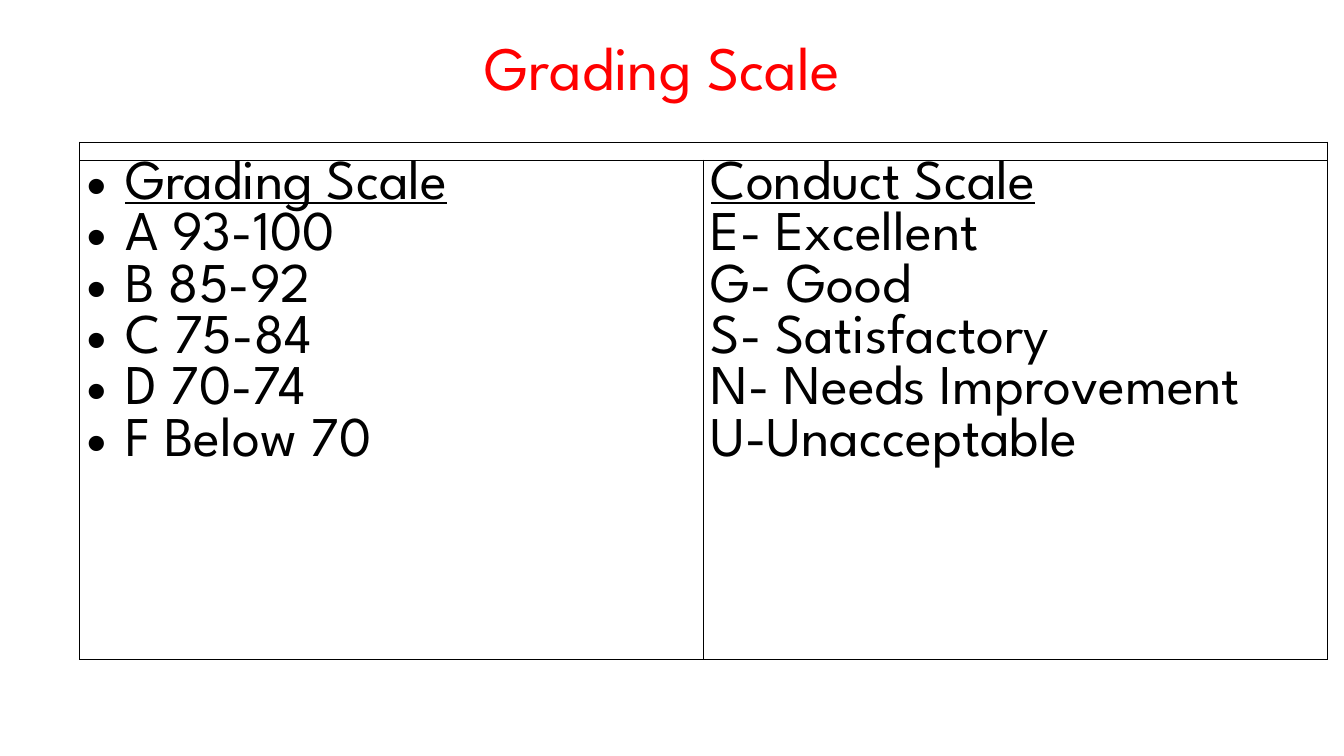
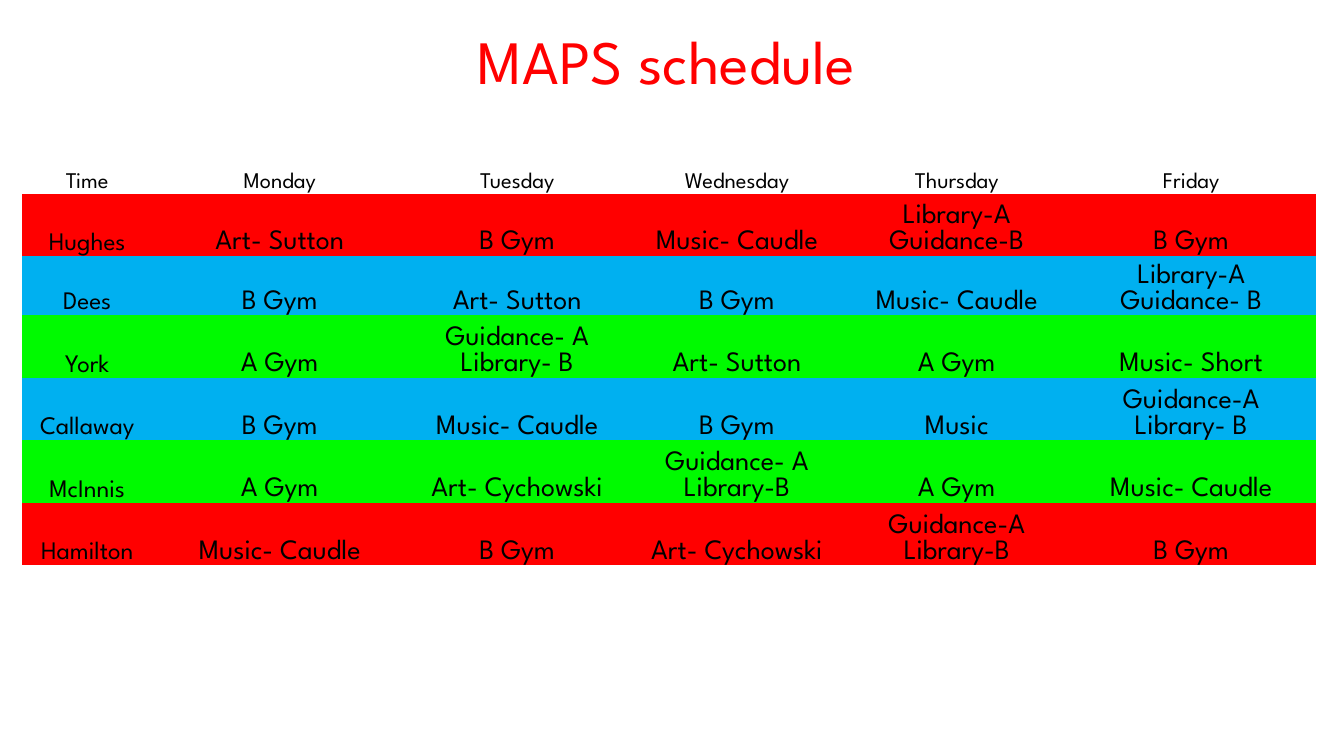
from lxml import etree
from pptx import Presentation
from pptx.dml.color import RGBColor
from pptx.enum.text import MSO_ANCHOR, PP_ALIGN
from pptx.oxml.ns import qn
from pptx.util import Inches, Pt

CENTER, LEFT = PP_ALIGN.CENTER, PP_ALIGN.LEFT
TOP, MIDDLE, BOTTOM = MSO_ANCHOR.TOP, MSO_ANCHOR.MIDDLE, MSO_ANCHOR.BOTTOM
TITLE_ONLY = 5
NO_STYLE = "{2D5ABB26-0587-4C30-8999-92F81FD0307C}"
RED, BLUE, GREEN = "FF0000", "00B0F0", "00FA00"
BLACK, WHITE = "000000", "FFFFFF"

GRADES = ["Grading Scale", "A 93-100", "B 85-92", "C 75-84", "D 70-74", "F Below 70"]
CONDUCT = ["Conduct Scale", "E- Excellent", "G- Good", "S- Satisfactory",
           "N- Needs Improvement", "U-Unacceptable"]
DAYS = ["Time", "Monday", "Tuesday", "Wednesday", "Thursday", "Friday"]
CLASSES = [
    (RED, ["Hughes", "Art- Sutton", "B Gym", "Music- Caudle",
           "Library-A\nGuidance-B", "B Gym"]),
    (BLUE, ["Dees", "B Gym", "Art- Sutton", "B Gym", "Music- Caudle",
            "Library-A\nGuidance- B"]),
    (GREEN, ["York", "A Gym", "Guidance- A\nLibrary- B", "Art- Sutton", "A Gym",
             "Music- Short"]),
    (BLUE, ["Callaway", "B Gym", "Music- Caudle", "B Gym", "Music",
            "Guidance-A\nLibrary- B"]),
    (GREEN, ["McInnis", "A Gym", "Art- Cychowski", "Guidance- A\nLibrary-B",
             "A Gym", "Music- Caudle"]),
    (RED, ["Hamilton", "Music- Caudle", "B Gym", "Art- Cychowski",
           "Guidance-A\nLibrary-B", "B Gym"]),
]


def rgb(color):
    """Turn a hex string into a colour."""
    return RGBColor.from_string(color)


class Deck:
    """Holds the shared style and the current slide."""

    font = "League Spartan"

    def __init__(self):
        """Start an empty widescreen presentation."""
        self.prs = Presentation()
        self.prs.slide_width, self.prs.slide_height = Inches(13.33), Inches(7.5)
        self.s = None

    def run(self, p, text, size, color=BLACK, underline=False):
        """Add one styled run to a paragraph."""
        r = p.add_run()
        r.text = text
        r.font.name, r.font.size = self.font, Pt(size)
        r.font.color.rgb = rgb(color)
        r.font.underline = underline

    def slide(self, title, x, y):
        """Add a slide with a centred red title."""
        self.s = self.prs.slides.add_slide(self.prs.slide_layouts[TITLE_ONLY])
        sp = self.s.shapes.title
        sp.left, sp.top, sp.width, sp.height = map(Inches, (x, y, 10, 0.89))
        tf = sp.text_frame
        tf.word_wrap, tf.vertical_anchor = True, MIDDLE
        p = tf.paragraphs[0]
        p.alignment, p.line_spacing = CENTER, 0.9
        self.run(p, title, 44, RED)

    def table(self, x, y, widths, heights):
        """Add a plain table with the given column widths and row heights."""
        frame = self.s.shapes.add_table(
            len(heights), len(widths), Inches(x), Inches(y),
            Inches(sum(widths)), Inches(sum(heights)))
        table = frame.table
        table.first_row = table.horz_banding = False
        table._tbl.tblPr.find(qn("a:tableStyleId")).text = NO_STYLE
        for column, width in zip(table.columns, widths):
            column.width = Inches(width)
        for row, height in zip(table.rows, heights):
            row.height = Inches(height)
        return table

    def cell(self, cell, fill, side=0, top=0, anchor=TOP):
        """Set the fill, margins and anchor of a cell."""
        cell.margin_left = cell.margin_right = Inches(side)
        cell.margin_top, cell.margin_bottom = Inches(top), 0
        cell.vertical_anchor = anchor
        if fill:
            cell.fill.solid()
            cell.fill.fore_color.rgb = rgb(fill)
        else:
            cell.fill.background()

    def lines(self, cell, texts, size, align=LEFT, heading=False, bullets=False):
        """Write one paragraph per text, with the first underlined as a heading."""
        tf = cell.text_frame
        for i, text in enumerate(texts):
            p = tf.add_paragraph() if i else tf.paragraphs[0]
            p.alignment = align
            if bullets:
                self.bullet(p)
            self.run(p, text, size, underline=heading and i == 0)

    def bullet(self, p):
        """Give a paragraph a hanging bullet."""
        pPr = p._p.get_or_add_pPr()
        pPr.set("marL", str(Inches(0.38)))
        pPr.set("indent", str(-Inches(0.38)))
        etree.SubElement(pPr, qn("a:buFont")).set("typeface", "Arial")
        etree.SubElement(pPr, qn("a:buChar")).set("char", "•")

    def border(self, cell):
        """Draw a thin black line on all four sides of a cell."""
        tcPr = cell._tc.get_or_add_tcPr()
        for i, side in enumerate(("a:lnL", "a:lnR", "a:lnT", "a:lnB")):
            ln = etree.Element(qn(side), w=str(Pt(1)))
            fill = etree.SubElement(ln, qn("a:solidFill"))
            etree.SubElement(fill, qn("a:srgbClr")).set("val", BLACK)
            tcPr.insert(i, ln)


def grading_slide(deck):
    """Build the grading and conduct scales."""
    deck.slide("Grading Scale", 1.57, 0.26)
    table = deck.table(0.79, 1.41, [6.19] * 2, [0.18, 4.95])
    for cell in table.iter_cells():
        deck.cell(cell, WHITE, side=0.07)
        deck.border(cell)
    for cell in table.rows[0].cells:
        p = cell.text_frame.paragraphs[0]
        p._p.get_or_add_endParaRPr().set("sz", "600")
    table.cell(0, 0).merge(table.cell(0, 1))
    deck.lines(table.cell(1, 0), GRADES, 40, heading=True, bullets=True)
    deck.lines(table.cell(1, 1), CONDUCT, 40, heading=True)


def schedule_slide(deck):
    """Build the weekly schedule."""
    deck.slide("MAPS schedule", 1.61, 0.2)
    table = deck.table(0.22, 1.3, [1.29, 2.53, 2.18, 2.18, 2.18, 2.47],
                       [0.62, 0.62, 0.59] + [0.62] * 4)
    for i, (fill, texts) in enumerate([(None, DAYS)] + CLASSES):
        for j, text in enumerate(texts):
            cell = table.cell(i, j)
            deck.cell(cell, fill, side=0.01, top=0.01, anchor=BOTTOM)
            size = 16 if i == 0 else 18 if j == 0 else 20
            deck.lines(cell, text.split("\n"), size, CENTER)


def main():
    """Build and save the deck."""
    deck = Deck()
    grading_slide(deck)
    schedule_slide(deck)
    deck.prs.save("out.pptx")


if __name__ == "__main__":
    main()
